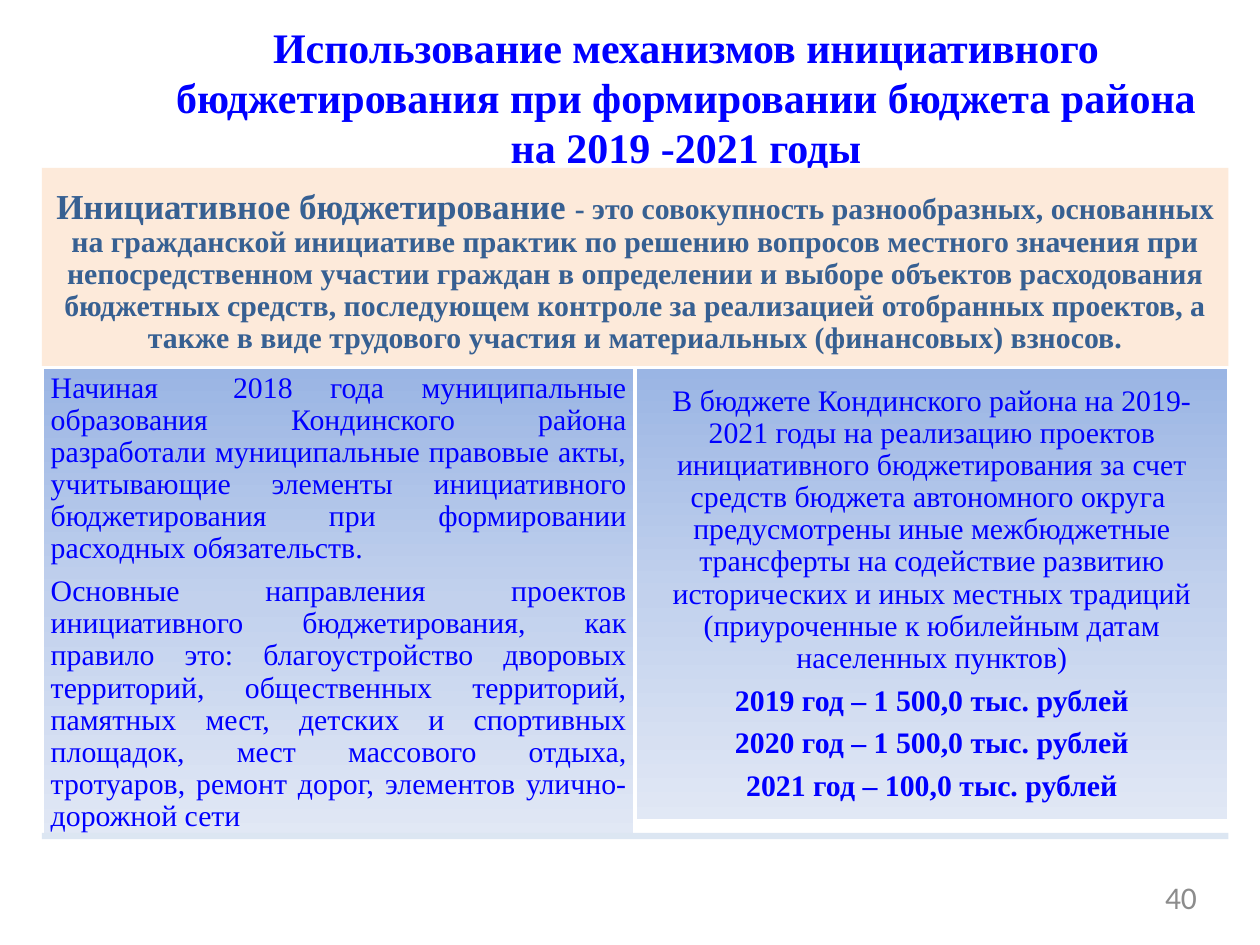
from copy import deepcopy

from pptx import Presentation
from pptx import util as u
from pptx.dml.color import RGBColor
from pptx.enum import shapes, text

COLOURS = {
    "title": "0000FF",
    "definition": "376092",
    "cream": "FDEADA",
    "bar": "DCE6F2",
    "white": "FFFFFF",
    "number": "8C8C8C",
}
GRADIENT = [(0, "9AB5E4"), (0.5, "C2D1ED"), (1, "E1E8F5")]
SERIF = "Times New Roman"
LEFT, WIDTH = 24, 678
PANEL_TOP, PANEL_WIDTH = 210, WIDTH / 2
CENTRE, JUSTIFY, RIGHT = (
    text.PP_ALIGN.CENTER,
    text.PP_ALIGN.JUSTIFY,
    text.PP_ALIGN.RIGHT,
)
BODY = {"line_spacing": 0.9, "space_after": u.Pt(6)}


def apply(target, values):
    for name, value in values.items():
        setattr(target, name, value)


class Composer:
    def __init__(self, page):
        self.page = page

    def colour(self, name):
        return RGBColor.from_string(COLOURS[name])

    def add_text(self, box, paragraphs, align, inset=0, anchor="TOP", spacing=None):
        frame = box.text_frame
        margins = {f"margin_{side}": u.Pt(inset) for side in ("left", "top", "right", "bottom")}
        apply(frame, margins)
        apply(frame, {
            "word_wrap": True,
            "auto_size": text.MSO_AUTO_SIZE.NONE,
            "vertical_anchor": text.MSO_ANCHOR[anchor],
        })
        for index, spans in enumerate(paragraphs):
            para = frame.add_paragraph() if index else frame.paragraphs[0]
            apply(para, {"alignment": align, **(spacing or {})})
            for words, size, colour, bold, font in spans:
                span = para.add_run()
                span.text = words
                apply(span.font, {"size": u.Pt(size), "bold": bold, "name": font})
                span.font.color.rgb = self.colour(colour)

    def label(self, bounds, spans, align):
        box = self.page.shapes.add_textbox(*map(u.Pt, bounds))
        self.add_text(box, [spans], align)

    def rectangle(self, bounds, fill=None):
        box = self.page.shapes.add_shape(shapes.MSO_SHAPE.RECTANGLE, *map(u.Pt, bounds))
        box.shadow.inherit = False
        box.line.fill.background()
        if fill:
            box.fill.solid()
            box.fill.fore_color.rgb = self.colour(fill)
        return box

    def panel(self, column, height, paragraphs, align):
        left = LEFT + column * PANEL_WIDTH
        box = self.rectangle((left, PANEL_TOP, PANEL_WIDTH, height))
        box.fill.gradient()
        box.fill.gradient_angle = 270
        stops = box._element.spPr.gradFill.gsLst
        stops.append(deepcopy(stops[-1]))
        for stop, (position, value) in zip(box.fill.gradient_stops, GRADIENT):
            stop.position = position
            stop.color.rgb = RGBColor.from_string(value)
        box.line.color.rgb = self.colour("white")
        box.line.width = u.Pt(2)
        self.add_text(box, paragraphs, align, 5, "MIDDLE", BODY)


def body(words, bold=False):
    return [(words, 17, "title", bold, SERIF)]


def main():
    deck = Presentation()
    apply(deck, {"slide_width": u.Pt(720), "slide_height": u.Pt(540)})
    composer = Composer(deck.slides.add_slide(deck.slide_layouts[6]))

    composer.label((90, 12, 604, 87), [(
        "Использование механизмов инициативного бюджетирования при формировании "
        "бюджета района на 2019 -2021 годы", 24, "title", True, SERIF)], CENTRE)

    definition = composer.rectangle((LEFT, 96, WIDTH, 119), "cream")
    composer.add_text(definition, [[
        ("Инициативное бюджетирование ", 20, "definition", True, SERIF),
        ("- это совокупность разнообразных, основанных на гражданской инициативе "
         "практик по решению вопросов местного значения при непосредственном участии "
         "граждан в определении и выборе объектов расходования бюджетных средств, "
         "последующем контроле за реализацией отобранных проектов, а также в виде "
         "трудового участия и материальных (финансовых) взносов.",
         17, "definition", True, SERIF),
    ]], CENTRE, 6, "MIDDLE", BODY)

    composer.panel(0, 269, [
        body("Начиная  2018 года муниципальные образования Кондинского района "
             "разработали муниципальные правовые акты, учитывающие элементы "
             "инициативного бюджетирования при формировании расходных обязательств."),
        body("Основные направления проектов инициативного бюджетирования, как правило "
             "это: благоустройство дворовых территорий, общественных территорий, "
             "памятных мест, детских и спортивных площадок, мест массового отдыха, "
             "тротуаров, ремонт дорог, элементов улично-дорожной сети"),
    ], JUSTIFY)

    budget = [("2019", "1 500,0"), ("2020", "1 500,0"), ("2021", "100,0")]
    composer.panel(1, 259, [
        body("В бюджете Кондинского района на 2019-2021 годы на реализацию проектов "
             "инициативного бюджетирования за счет средств бюджета автономного округа  "
             "предусмотрены иные межбюджетные трансферты на содействие развитию "
             "исторических и иных местных традиций (приуроченные к юбилейным датам "
             "населенных пунктов)"),
        *(body(f"{year} год – {amount} тыс. рублей", True) for year, amount in budget),
    ], CENTRE)

    composer.rectangle((LEFT, 476, WIDTH, 3.6), "bar")
    composer.label((518, 502, 166, 27), [("40", 18, "number", False, "Calibri")], RIGHT)

    deck.save("out.pptx")


if __name__ == "__main__":
    main()
